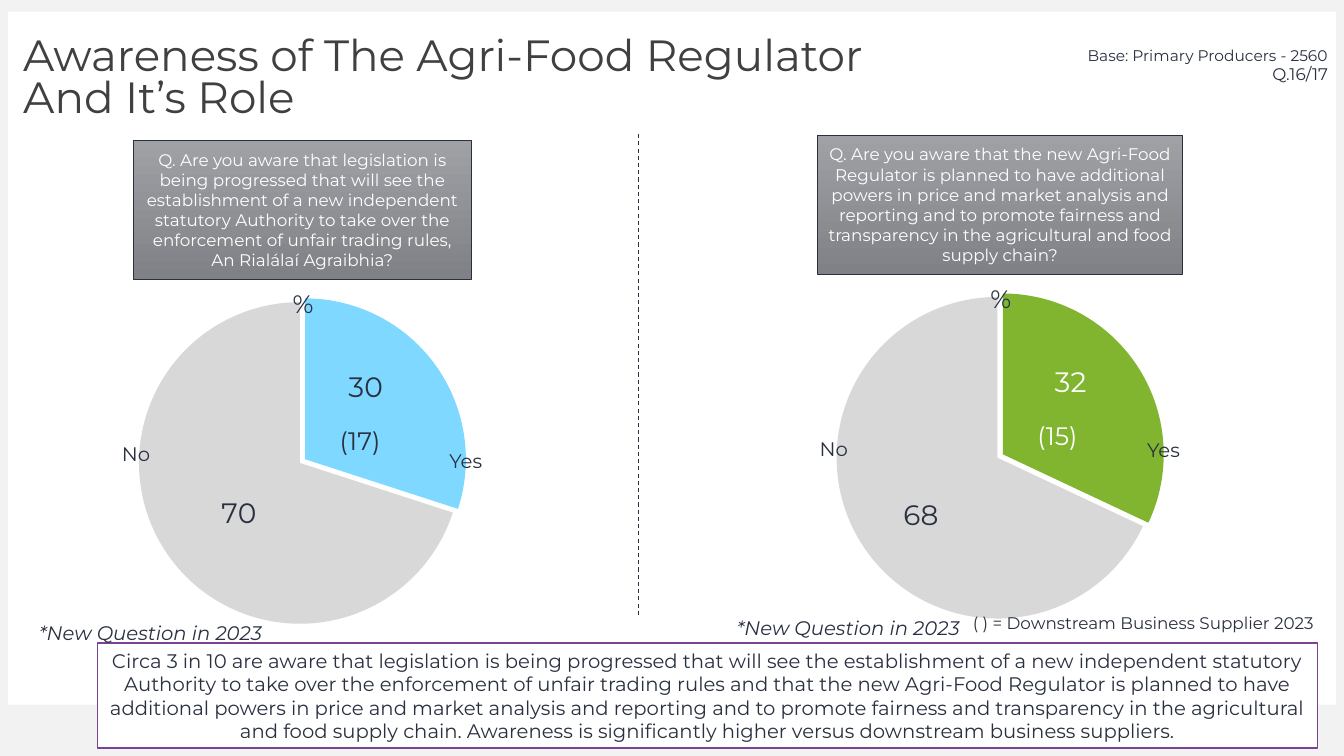
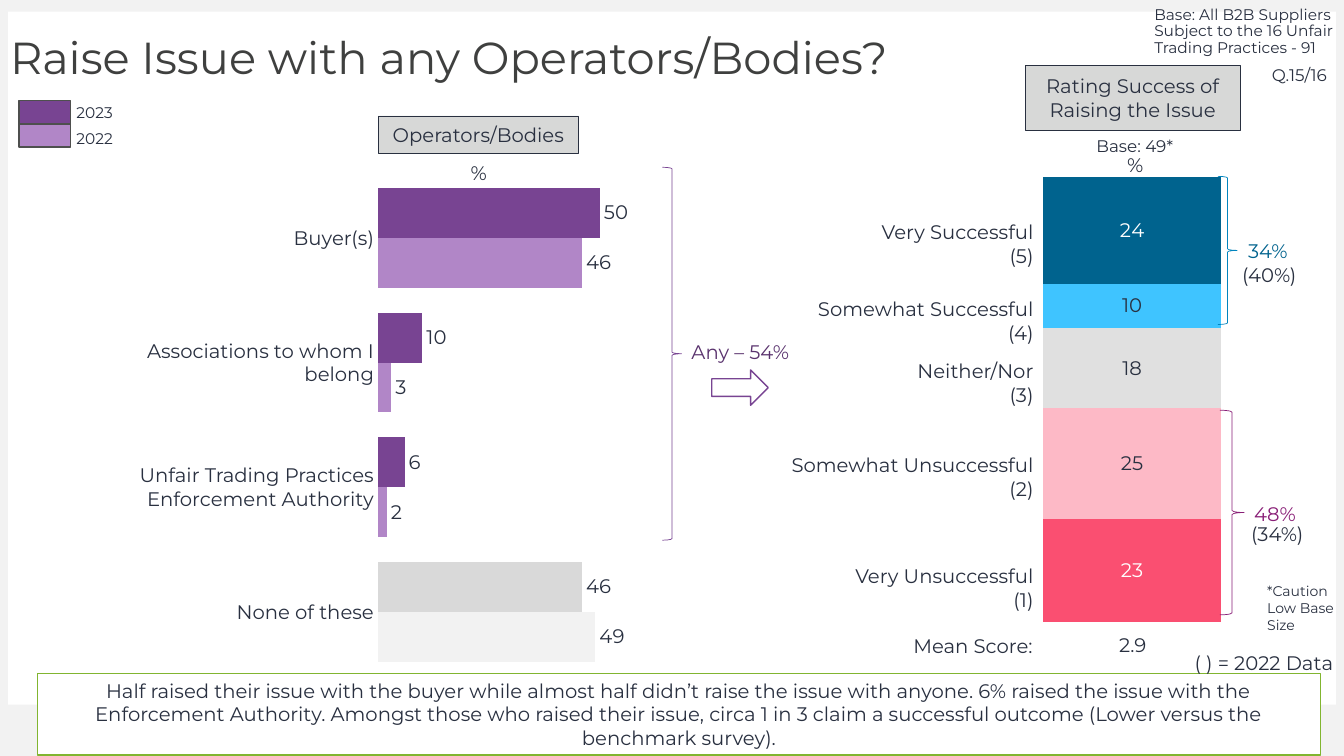
from pptx import Presentation
from pptx import util as u
from pptx.chart import data
from pptx.dml.color import RGBColor
from pptx.enum import chart as ch, dml, shapes, text
from pptx.oxml import ns
from pptx.oxml.xmlchemy import OxmlElement

FONT = "Montserrat"
INK = RGBColor(0x29, 0x30, 0x40)
TITLE = RGBColor(0x3F, 0x40, 0x3F)
WHITE = RGBColor(0xFF, 0xFF, 0xFF)
PAPER = RGBColor(0xF2, 0xF2, 0xF2)
GREY = RGBColor(0xD7, 0xD8, 0xD7)
NONE_GREY = RGBColor(0xD9, 0xD9, 0xD9)
KEY_LINE = RGBColor(0x4E, 0x4F, 0x4E)
GRAD_TOP = RGBColor(0xA0, 0xA1, 0xA5)
GRAD_END = RGBColor(0x7F, 0x81, 0x86)
PURPLE = RGBColor(0x78, 0x44, 0x92)
DEEP_PURPLE = RGBColor(0x5A, 0x33, 0x6E)
LILAC = RGBColor(0xB1, 0x86, 0xC7)
GREEN = RGBColor(0x81, 0xB5, 0x30)
SKY = RGBColor(0x7F, 0xD8, 0xFF)
NAVY = RGBColor(0x00, 0x63, 0x8E)
BLUE = RGBColor(0x00, 0x84, 0xBE)
BRIGHT = RGBColor(0x3F, 0xC4, 0xFF)
NEUTRAL = RGBColor(0xE0, 0xE0, 0xE0)
PINK = RGBColor(0xFD, 0xB9, 0xC6)
RED = RGBColor(0xFA, 0x4F, 0x71)
PLUM = RGBColor(0x89, 0x1F, 0x77)

LEFT, CENTER, RIGHT = text.PP_ALIGN.LEFT, text.PP_ALIGN.CENTER, text.PP_ALIGN.RIGHT
TOP, MIDDLE = text.MSO_ANCHOR.TOP, text.MSO_ANCHOR.MIDDLE
KIND = shapes.MSO_SHAPE


def inches(*values):
    """Convert numbers to lengths."""
    return [u.Inches(v) for v in values]


def write(tf, words, size=14, color=INK, align=LEFT, anchor=MIDDLE, wrap=True,
          italic=False, spacing=None):
    """Fill a text frame, one paragraph per line of words."""
    tf.word_wrap = wrap
    tf.vertical_anchor = anchor
    for i, line in enumerate(words.split("\n")):
        p = tf.add_paragraph() if i else tf.paragraphs[0]
        p.alignment = align
        if spacing:
            p.line_spacing = spacing
        r = p.add_run()
        r.text = line
        r.font.name, r.font.size = FONT, u.Pt(size)
        r.font.italic = italic
        r.font.color.rgb = color


def add_text(s, words, x, y, w, h, **style):
    """Add a text box."""
    write(s.shapes.add_textbox(*inches(x, y, w, h)).text_frame, words, **style)


def add_box(s, x, y, w, h, kind=KIND.RECTANGLE, fill=None, line=None, weight=1, words="", **style):
    """Add a preset shape with optional fill, outline and centred text."""
    sp = s.shapes.add_shape(kind, *inches(x, y, w, h))
    sp.shadow.inherit = False
    if fill is None:
        sp.fill.background()
    else:
        sp.fill.solid()
        sp.fill.fore_color.rgb = fill
    if line is None:
        sp.line.fill.background()
    else:
        sp.line.color.rgb = line
        sp.line.width = u.Pt(weight)
    if words:
        write(sp.text_frame, words, align=CENTER, **style)
    return sp


def add_master_frame(prs, s):
    """Put the white page and its grey surround on the master."""
    master = prs.slide_master
    master.background.fill.solid()
    master.background.fill.fore_color.rgb = PAPER
    page = add_box(s, 0.08, 0.08, 13.17, 6.92, fill=WHITE)
    band = add_box(s, 0, 6.99, 13.33, 0.55, fill=PAPER)
    frame = add_box(s, 0, 0.04, 13.34, 7.5, kind=KIND.FRAME, fill=PAPER)
    frame.adjustments[0] = 0.01
    for number, sp in enumerate((page, band, frame), 101):
        sp.element.nvSpPr.cNvPr.set("id", str(number))
        master.shapes.element.append(sp.element)


def set_title(s, words, x, y, w, h, **style):
    """Place and format the title placeholder."""
    title = s.shapes.title
    title.left, title.top, title.width, title.height = inches(x, y, w, h)
    title.text_frame.auto_size = text.MSO_AUTO_SIZE.NONE
    write(title.text_frame, words, color=TITLE, **style)


def add_element(parent, tag, value=None):
    """Append a chart element with an optional value."""
    child = OxmlElement(tag)
    if value is not None:
        child.set("val", str(value))
    parent.append(child)
    return child


def make_layout(**values):
    """Build a manual chart layout."""
    layout = OxmlElement("c:layout")
    manual = add_element(layout, "c:manualLayout")
    for name, value in values.items():
        add_element(manual, f"c:{name}", value)
    return layout


def set_plot_area(chart, x, y, w, h):
    """Fix the inner plot area as fractions of the chart."""
    area = chart.element.find(".//" + ns.qn("c:plotArea"))
    for old in area.findall(ns.qn("c:layout")):
        area.remove(old)
    area.insert(0, make_layout(layoutTarget="inner", xMode="edge", yMode="edge", x=x, y=y, w=w, h=h))


def add_chart(s, kind, x, y, w, h, cats, rows, size=14):
    """Add a bare chart with one series per row."""
    cd = data.CategoryChartData()
    cd.categories = cats
    for i, row in enumerate(rows, 1):
        cd.add_series(f"Series {i}", row)
    chart = s.shapes.add_chart(kind, *inches(x, y, w, h), cd).chart
    chart.has_title = chart.has_legend = False
    chart.font.name, chart.font.size = FONT, u.Pt(size)
    chart.font.color.rgb = INK
    return chart


def hide_axes(chart):
    """Hide both axes and the gridlines."""
    chart.value_axis.has_major_gridlines = False
    chart.value_axis.visible = chart.category_axis.visible = False


def paint(part, color):
    """Fill a series or a point."""
    part.format.fill.solid()
    part.format.fill.fore_color.rgb = color


def label_series(series, color=INK, position=None):
    """Show the values of a series."""
    labels = series.data_labels
    labels.show_value = True
    labels.font.name, labels.font.size = FONT, u.Pt(14)
    labels.font.color.rgb = color
    if position is not None:
        labels.position = position


def add_pie_panel(s, x, y, question, q_width, values, color, yes_ink, shifts, other, yes_y):
    """Draw a question, its pie and the pie's labels; x and y are the pie's corner."""
    w, h = 4.26, 3.53
    chart = add_chart(s, ch.XL_CHART_TYPE.PIE, x, y, w, h, ["1", "2"], [values], size=20)
    plot = chart.plots[0]
    plot.vary_by_categories = False
    series = plot.series[0]
    explosion = OxmlElement("c:explosion")
    explosion.set("val", "2")
    series.format.element.get_or_add_spPr().addnext(explosion) if hasattr(series.format, "element") \
        else series._element.get_or_add_spPr().addnext(explosion)
    for i, (fill, ink) in enumerate(((color, yes_ink), (GREY, INK))):
        point = series.points[i]
        paint(point, fill)
        label = point.data_label
        label.font.name, label.font.size = FONT, u.Pt(20)
        label.font.color.rgb = ink
        label.position = ch.XL_LABEL_POSITION.CENTER
    for mark, (dx, dy) in zip(series._element.iter(ns.qn("c:dLbl")), shifts):
        mark.find(ns.qn("c:idx")).addnext(make_layout(x=dx, y=dy))

    q = add_box(s, x + (w - q_width) / 2, y - 1.42, q_width, 1.38, line=INK, weight=0.5,
                words=question, size=12, color=WHITE)
    q.fill.gradient()
    q.fill.gradient_angle = 270
    for stop, shade in zip(q.fill.gradient_stops, (GRAD_TOP, GRAD_END)):
        stop.color.rgb = shade
    add_text(s, "%", x + 1.93, y, 0.41, 0.4, size=18, align=CENTER, wrap=False)
    add_text(s, "No", x + 0.18, y + 1.53, 0.6, 0.32, align=CENTER, wrap=False)
    add_text(s, "Yes", x + 3.39, y + yes_y - 0.17, 0.72, 0.34, align=CENTER, wrap=False)
    add_text(s, other, x + 2.4, y + 1.36, 0.61, 0.4, size=18, color=yes_ink, anchor=TOP, wrap=False)
    add_text(s, "*New Question in 2023", x - 0.58, y + 3.3, 2.43, 0.34, italic=True, anchor=TOP, wrap=False)


def add_legend(s, x, y):
    """Draw the year key."""
    for i, (year, color) in enumerate((("2023", PURPLE), ("2022", LILAC))):
        add_box(s, x, y + 0.23 * i, 0.51, 0.23, fill=color, line=KEY_LINE)
        add_text(s, year, x + 0.47, y - 0.01 + 0.26 * i, 0.95, 0.26, size=11, anchor=TOP, spacing=0.9)


def add_operators(s, x, y):
    """Draw the operators bar chart with its row names; x and y are the chart's corner."""
    chart = add_chart(s, ch.XL_CHART_TYPE.BAR_CLUSTERED, x, y, 3.52, 5.05,
                      ["1", "2", "3", "4"], [(50, 10, 6, 46), (46, 3, 2, 49)])
    hide_axes(chart)
    chart.category_axis.reverse_order = True
    chart.value_axis.minimum_scale, chart.value_axis.maximum_scale = 0, 80
    set_plot_area(chart, 0, 0.02, 1, 0.98)
    plot = chart.plots[0]
    plot.gap_width, plot.overlap = 50, 0
    plot.vary_by_categories = False
    for series, color, none_color in zip(plot.series, (PURPLE, LILAC), (NONE_GREY, PAPER)):
        series.invert_if_negative = False
        paint(series, color)
        paint(series.points[3], none_color)
        label_series(series, position=ch.XL_LABEL_POSITION.OUTSIDE_END)

    names = ("Buyer(s)", "Associations to whom I belong",
             "Unfair Trading Practices\nEnforcement Authority", "None of these")
    table = s.shapes.add_table(4, 1, *inches(x - 2.77, y + 0.1, 2.74, 4.95)).table
    table.first_row = table.horz_banding = False
    for i, name in enumerate(names):
        cell = table.cell(i, 0)
        cell.fill.background()
        cell.margin_left = cell.margin_right = cell.margin_top = u.Inches(0.01)
        cell.margin_bottom = 0
        cell.vertical_anchor = MIDDLE
        write(cell.text_frame, name, align=RIGHT)

    add_text(s, "%", x + 0.81, y - 0.09, 0.38, 0.34, align=CENTER, anchor=TOP, wrap=False)
    add_box(s, x, y - 0.49, 1.99, 0.37, fill=GREY, line=INK, weight=0.5, words="Operators/Bodies")
    add_box(s, x + 2.82, y + 0.02, 0.19, 3.7, kind=KIND.RIGHT_BRACE, line=PURPLE, weight=0.5)
    add_text(s, "Any – 54%", x + 3.01, y + 1.66, 1.34, 0.37, color=DEEP_PURPLE)
    add_box(s, x + 3.31, y + 2.03, 0.56, 0.35, kind=KIND.RIGHT_ARROW, fill=WHITE, line=PURPLE)


def add_ratings(s, x, y):
    """Draw the stacked rating column with its labels; x and y are the chart's corner."""
    chart = add_chart(s, ch.XL_CHART_TYPE.COLUMN_STACKED_100, x, y, 3.74, 5.07,
                      ["1"], [(24,), (10,), (18,), (25,), (23,)])
    hide_axes(chart)
    chart.value_axis.reverse_order = True
    set_plot_area(chart, 0, 0.11, 1, 0.87)
    plot = chart.plots[0]
    plot.gap_width, plot.overlap = 112, 100
    plot.vary_by_categories = False
    ratings = (("Very Successful", 0.93, NAVY, WHITE), ("Somewhat Successful", 1.69, BRIGHT, INK),
               ("Neither/Nor", 2.31, NEUTRAL, INK), ("Somewhat Unsuccessful", 3.24, PINK, INK),
               ("Very Unsuccessful", 4.34, RED, WHITE))
    for i, (series, (name, dy, color, ink)) in enumerate(zip(plot.series, ratings)):
        paint(series, color)
        label_series(series, ink, ch.XL_LABEL_POSITION.CENTER)
        add_text(s, name, x - 1.71, y + dy, 2.7, 0.34, align=RIGHT)
        add_text(s, f"({5 - i})", x + 0.49, y + dy + 0.24, 0.5, 0.34, align=RIGHT, anchor=TOP, wrap=False)

    add_box(s, x + 0.81, y - 0.55, 2.13, 0.64, fill=GREY, line=INK, weight=0.5,
            words="Rating Success of Raising the Issue")
    add_text(s, "Base: 49*", x + 1.41, y + 0.1, 0.97, 0.3, size=12, align=CENTER, anchor=TOP, wrap=False)
    add_text(s, "%", x + 1.71, y + 0.27, 0.38, 0.34, align=CENTER, anchor=TOP, wrap=False)
    add_box(s, x + 2.72, y + 0.55, 0.19, 1.47, kind=KIND.RIGHT_BRACE, line=BLUE, weight=0.5)
    add_box(s, x + 2.74, y + 2.87, 0.24, 2.03, kind=KIND.RIGHT_BRACE, line=PLUM, weight=0.5)
    add_text(s, "34%", x + 2.92, y + 1.12, 0.67, 0.34, color=NAVY)
    add_text(s, "48%", x + 2.98, y + 3.79, 0.67, 0.21, color=PLUM)
    add_text(s, "(40%)", x + 2.86, y + 1.36, 0.75, 0.34, anchor=TOP, wrap=False)
    add_text(s, "(34%)", x + 2.95, y + 3.93, 0.73, 0.34, anchor=TOP, wrap=False)
    add_text(s, "Mean Score:", x - 0.61, y + 5.04, 1.59, 0.34, align=RIGHT)
    add_text(s, "2.9", x + 1.21, y + 5.03, 1.33, 0.34, align=CENTER)


def build_awareness(s):
    """Build the awareness slide."""
    set_title(s, "Awareness of The Agri-Food Regulator And It’s Role", 0.13, 0.28, 9.3, 1.02,
              size=31.2, spacing=0.8)
    add_box(s, 0.97, 6.38, 12.1, 1.04, fill=WHITE, line=PURPLE, words=(
        "Circa 3 in 10 are aware that legislation is being progressed that will see the establishment "
        "of a new independent statutory Authority to take over the enforcement of unfair trading rules "
        "and that the new Agri-Food Regulator is planned to have additional powers in price and market "
        "analysis and reporting and to promote fairness and transparency in the agricultural and food "
        "supply chain. Awareness is significantly higher versus downstream business suppliers."))
    add_pie_panel(s, 0.87, 2.81, (
        "Q. Are you aware that legislation is being progressed that will see the establishment of a new "
        "independent statutory Authority to take over the enforcement of unfair trading rules, "
        "An Rialálaí Agraibhia?"), 3.35, (30, 70), SKY, INK,
        ((-0.01, -0.07), (0.01, 0.01)), "(17)", 1.76)
    add_pie_panel(s, 7.79, 2.76, (
        "Q. Are you aware that the new Agri-Food Regulator is planned to have additional powers in price "
        "and market analysis and reporting and to promote fairness and transparency in the agricultural "
        "and food supply chain?"), 3.62, (32, 68), GREEN, WHITE,
        ((0, -0.08), (-0.02, 0.04)), "(15)", 1.7)
    divider = s.shapes.add_connector(shapes.MSO_CONNECTOR.STRAIGHT, *inches(6.33, 1.33, 6.33, 6.11))
    divider.line.color.rgb = INK
    divider.line.width = u.Pt(0.75)
    divider.line.dash_style = dml.MSO_LINE.DASH
    add_element(divider.element.spPr, "a:effectLst")
    add_text(s, "Base: Primary Producers - 2560", 10.2, 0.43, 3.07, 0.3, size=11, align=RIGHT, anchor=TOP,
             spacing=0.9)
    add_text(s, "Q.16/17", 12.19, 0.58, 1.08, 0.3, size=12, align=RIGHT)
    add_text(s, "( ) = Downstream Business Supplier 2023", 9.55, 6.03, 3.63, 0.3, size=12, anchor=TOP,
             wrap=False)


def build_issues(s):
    """Build the raised issues slide."""
    set_title(s, "Raise Issue with any Operators/Bodies?", 0, 0.15, 13.33, 0.89, size=32, spacing=0.9)
    add_legend(s, 0.19, 1)
    add_operators(s, 3.75, 1.64)
    add_box(s, 0.37, 6.68, 12.73, 0.81, fill=WHITE, line=GREEN, words=(
        "Half raised their issue with the buyer while almost half didn’t raise the issue with anyone. "
        "6% raised the issue with the Enforcement Authority. Amongst those who raised their issue, circa "
        "1 in 3 claim a successful outcome (Lower versus the benchmark survey)."))
    add_ratings(s, 9.36, 1.2)
    add_text(s, "Base: All B2B Suppliers Subject to the 16 Unfair Trading Practices - 91",
             11.35, 0.02, 2.37, 0.29, size=11, anchor=TOP, spacing=0.9)
    add_text(s, "Q.15/16", 12.35, 0.59, 0.91, 0.3, size=12, align=RIGHT)
    add_text(s, "*Caution Low Base Size", 12.47, 5.73, 1.03, 0.61, size=10, anchor=TOP)
    add_text(s, "( ) = 2022 Data", 11.75, 6.41, 1.59, 0.34, anchor=TOP, wrap=False)


def main():
    """Build and save the presentation."""
    prs = Presentation()
    prs.slide_width, prs.slide_height = inches(13.33, 7.5)
    awareness, issues = [prs.slides.add_slide(prs.slide_layouts[5]) for _ in range(2)]
    add_master_frame(prs, awareness)
    build_awareness(awareness)
    build_issues(issues)
    prs.save("out.pptx")


if __name__ == "__main__":
    main()
